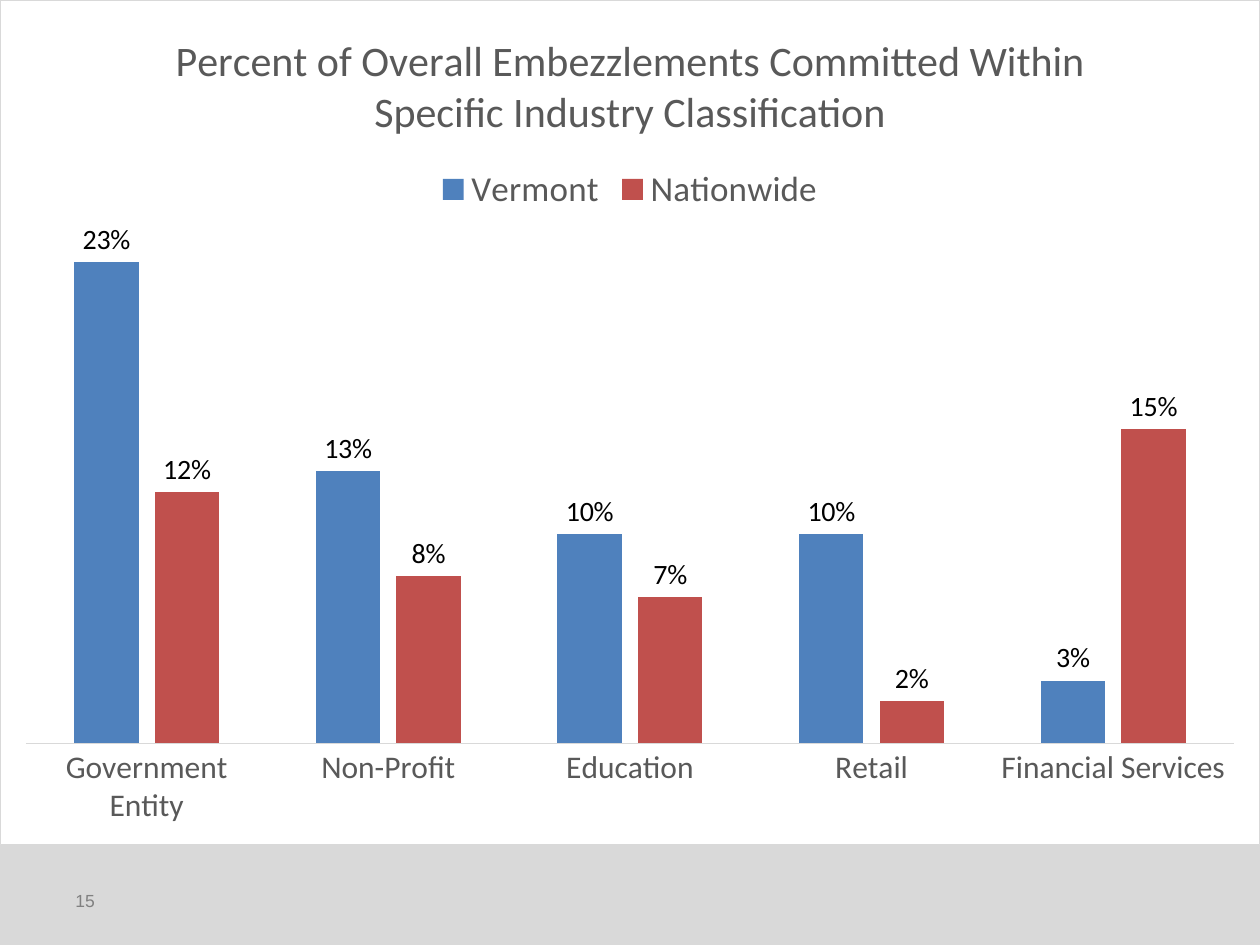
from lxml import etree
from pptx import Presentation
from pptx import util as u
from pptx.chart.data import CategoryChartData
from pptx.dml.color import RGBColor
from pptx.enum import chart as ch, shapes, text
from pptx.oxml import parse_xml
from pptx.oxml.ns import nsdecls, qn

WHITE = RGBColor(0xFF, 0xFF, 0xFF)
BLACK = RGBColor(0x00, 0x00, 0x00)
LIGHT = RGBColor(0xD9, 0xD9, 0xD9)
GRAY = RGBColor(0x80, 0x80, 0x80)
DARK = RGBColor(0x59, 0x59, 0x59)
BLUE = RGBColor(0x4F, 0x81, 0xBD)
RED = RGBColor(0xC0, 0x50, 0x4D)

TITLE = "Percent of Overall Embezzlements Committed Within Specific Industry Classification"
INDUSTRIES = ["Government Entity", "Non-Profit", "Education", "Retail", "Financial Services"]
SERIES = [
    ("Vermont", (0.23, 0.13, 0.10, 0.10, 0.03), BLUE),
    ("Nationwide", (0.12, 0.08, 0.07, 0.02, 0.15), RED),
]
PLOT_AREA = {"x": 0.02, "y": 0.26, "w": 0.96, "h": 0.62}


class Deck:
    chart_font = "Calibri"
    number_font = "Arial"

    def __init__(self, slide):
        self.s = slide

    def style(self, font, name, size, color):
        font.name, font.size, font.bold = name, u.Pt(size), False
        font.color.rgb = color

    def band(self, x, y, w, h, color):
        sp = self.s.shapes.add_shape(
            shapes.MSO_SHAPE.RECTANGLE, *map(u.Inches, (x, y, w, h)))
        sp.shadow.inherit = False
        sp.fill.solid()
        sp.fill.fore_color.rgb = color
        sp.line.color.rgb = color
        sp.line.width = u.Pt(0.75)

    def label(self, x, y, w, h, words, size, color):
        tf = self.s.shapes.add_textbox(*map(u.Inches, (x, y, w, h))).text_frame
        tf.word_wrap = True
        tf.vertical_anchor = text.MSO_ANCHOR.MIDDLE
        tf.text = words
        self.style(tf.paragraphs[0].runs[0].font, self.number_font, size, color)

    def chart(self, x, y, w, h, title, cats, series):
        data = CategoryChartData(number_format="0%")
        data.categories = cats
        for name, vals, _ in series:
            data.add_series(name, vals)
        c = self.s.shapes.add_chart(
            ch.XL_CHART_TYPE.COLUMN_CLUSTERED, *map(u.Inches, (x, y, w, h)), data).chart
        self.style(c.font, self.chart_font, 10, BLACK)

        c.has_title = True
        tf = c.chart_title.text_frame
        tf.text = title
        self.style(tf.paragraphs[0].runs[0].font, self.chart_font, 24, DARK)
        c.chart_title.include_in_layout = False

        c.has_legend = True
        c.legend.position = ch.XL_LEGEND_POSITION.TOP
        c.legend.include_in_layout = False
        self.style(c.legend.font, self.chart_font, 20, DARK)

        axis = c.category_axis
        axis.major_tick_mark = axis.minor_tick_mark = ch.XL_TICK_MARK.NONE
        axis.format.line.color.rgb = LIGHT
        axis.format.line.width = u.Pt(0.75)
        self.style(axis.tick_labels.font, self.chart_font, 18, DARK)
        values = c.value_axis
        values.minimum_scale, values.maximum_scale = 0, 0.25
        values.has_major_gridlines = False
        values.visible = False

        plot = c.plots[0]
        plot.gap_width, plot.overlap = 150, -25
        plot.vary_by_categories = False
        for ser, (_, _, color) in zip(plot.series, series):
            ser.format.fill.solid()
            ser.format.fill.fore_color.rgb = color
            dl = ser.data_labels
            dl.show_value = True
            dl.number_format, dl.number_format_is_linked = "0%", False
            dl.position = ch.XL_LABEL_POSITION.OUTSIDE_END
            self.style(dl.font, self.chart_font, 16, BLACK)
        self.place_plot(c)
        self.frame(c, WHITE, LIGHT)

    def place_plot(self, c):
        area = c._chartSpace.find(".//" + qn("c:plotArea"))
        for old in area.findall(qn("c:layout")):
            area.remove(old)
        layout = etree.Element(qn("c:layout"))
        manual = etree.SubElement(layout, qn("c:manualLayout"))
        settings = {"layoutTarget": "inner", "xMode": "edge", "yMode": "edge", **PLOT_AREA}
        for tag, val in settings.items():
            etree.SubElement(manual, qn("c:" + tag)).set("val", str(val))
        area.insert(0, layout)

    def frame(self, c, fill, line):
        c._chartSpace.find(qn("c:chart")).addnext(parse_xml(
            f'<c:spPr {nsdecls("c", "a")}>'
            f'<a:solidFill><a:srgbClr val="{fill}"/></a:solidFill>'
            f'<a:ln w="{u.Pt(0.75)}"><a:solidFill><a:srgbClr val="{line}"/></a:solidFill></a:ln>'
            '</c:spPr>'))


def main():
    prs = Presentation()
    prs.slide_width, prs.slide_height = u.Inches(10), u.Inches(7.5)
    deck = Deck(prs.slides.add_slide(prs.slide_layouts[6]))
    deck.band(0, 6.71, 10, 0.79, LIGHT)
    deck.label(0.5, 6.95, 2.33, 0.4, "15", 10, GRAY)
    deck.chart(0, 0, 10, 6.71, TITLE, INDUSTRIES, SERIES)
    prs.save("out.pptx")


if __name__ == "__main__":
    main()
